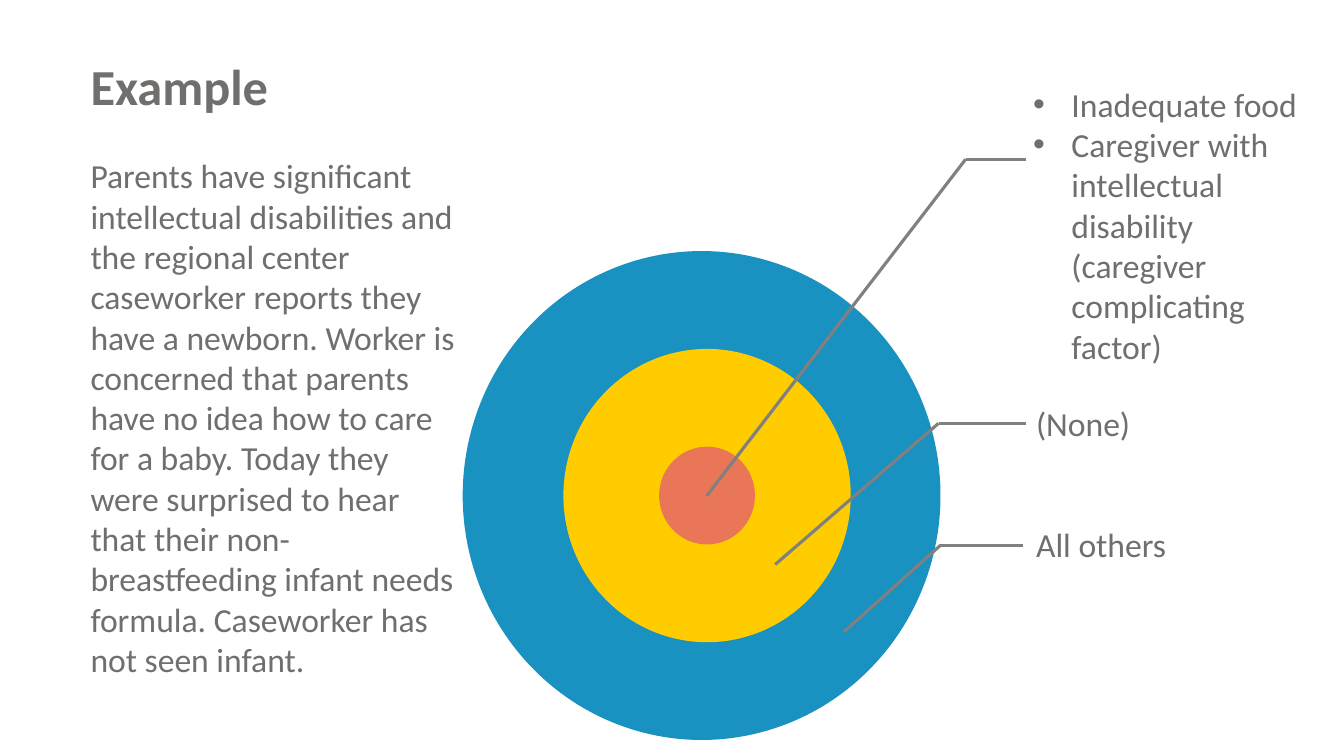
"""Build the Example slide: a case story beside a three-ring target with labelled leaders."""
from dataclasses import dataclass

from lxml.etree import SubElement
from pptx import Presentation
from pptx.dml.color import RGBColor
from pptx.enum.shapes import MSO_CONNECTOR, MSO_SHAPE
from pptx.enum.text import MSO_ANCHOR, MSO_AUTO_SIZE
from pptx.oxml.ns import qn
from pptx.slide import Slide
from pptx.util import Emu, Inches, Pt

SLIDE_WIDTH, SLIDE_HEIGHT = Inches(13.33), Inches(7.5)
RING_MIDDLE = 65.55
BULLET_INDENT = Inches(0.38)


@dataclass(frozen=True)
class Theme:
    font: str = "Calibri"
    text: str = "716F6D"
    leader: str = "808080"
    outer: str = "1991C1"
    middle: str = "FFCC00"
    inner: str = "EA7658"
    title_size: int = 36
    body_size: int = 24
    leader_width: float = 2.25


@dataclass(frozen=True)
class Passage:
    left: float
    top: float
    width: float
    height: float
    paragraphs: tuple[str, ...]
    bulleted: bool = False
    heading: bool = False


@dataclass(frozen=True)
class Ring:
    center: float
    width: float
    height: float
    color: str


@dataclass(frozen=True)
class Leader:
    elbow: tuple[float, float]
    label_edge: float
    target: tuple[float, float]


THEME = Theme()

RINGS = (
    Ring(52.2, 35.55, 64.67, THEME.outer),
    Ring(52.61, 21.38, 38.8, THEME.middle),
    Ring(52.61, 7.13, 12.93, THEME.inner),
)

LEADERS = (
    Leader((71.85, 21.07), 76.35, (52.58, 65.6)),
    Leader((69.83, 56), 76.35, (57.68, 74.67)),
    Leader((69.98, 72.13), 76.13, (62.78, 83.6)),
)

STORY = (
    "Parents have significant intellectual disabilities and the regional center "
    "caseworker reports they have a newborn. Worker is concerned that parents have "
    "no idea how to care for a baby. Today they were surprised to hear that their "
    "non-breastfeeding infant needs formula. Caseworker has not seen infant."
)

INNER_FACTORS = (
    "Inadequate food",
    "Caregiver with intellectual disability (caregiver complicating factor)",
)

INTRODUCTION = (
    Passage(6, 3.6, 87.38, 16.4, ("Example",), heading=True),
    Passage(6, 19.87, 29.18, 71.33, (STORY,)),
)

LABELS = (
    Passage(76.13, 10.4, 22.35, 39.07, INNER_FACTORS, bulleted=True),
    Passage(76.35, 52.67, 11.78, 6.67, ("(None)",)),
    Passage(76.35, 68.67, 13.43, 6.67, ("All others",)),
)


def across(percent: float) -> Emu:
    """Turn a percentage of the slide's width into a length."""
    return Emu(round(SLIDE_WIDTH * percent / 100))


def down(percent: float) -> Emu:
    """Turn a percentage of the slide's height into a length."""
    return Emu(round(SLIDE_HEIGHT * percent / 100))


def draw_passage(slide: Slide, passage: Passage) -> None:
    """Write a block of text, with bullets where it asks for them."""
    frame = slide.shapes.add_textbox(
        across(passage.left), down(passage.top),
        across(passage.width), down(passage.height),
    ).text_frame
    frame.word_wrap = True
    if passage.heading:
        frame.vertical_anchor = MSO_ANCHOR.MIDDLE
    else:
        frame.auto_size = MSO_AUTO_SIZE.SHAPE_TO_FIT_TEXT
    for index, wording in enumerate(passage.paragraphs):
        paragraph = frame.add_paragraph() if index else frame.paragraphs[0]
        if passage.heading:
            paragraph.line_spacing = 0.9
        if passage.bulleted:
            properties = paragraph._p.get_or_add_pPr()
            properties.set("marL", str(BULLET_INDENT))
            properties.set("indent", str(-BULLET_INDENT))
            SubElement(properties, qn("a:buFont"), typeface="Arial")
            SubElement(properties, qn("a:buChar"), char="•")
        run = paragraph.add_run()
        run.text = wording
        run.font.name = THEME.font
        run.font.size = Pt(THEME.title_size if passage.heading else THEME.body_size)
        run.font.bold = passage.heading
        run.font.color.rgb = RGBColor.from_string(THEME.text)


def draw_ring(slide: Slide, ring: Ring) -> None:
    """Draw one disc of the target."""
    disc = slide.shapes.add_shape(
        MSO_SHAPE.OVAL,
        across(ring.center - ring.width / 2), down(RING_MIDDLE - ring.height / 2),
        across(ring.width), down(ring.height),
    )
    disc.shadow.inherit = False
    disc.fill.solid()
    disc.fill.fore_color.rgb = RGBColor.from_string(ring.color)
    disc.line.fill.background()


def draw_leader(slide: Slide, leader: Leader) -> None:
    """Draw a bent line from a label to its ring."""
    x, y = leader.elbow
    for end_x, end_y in ((leader.label_edge, y), leader.target):
        stroke = slide.shapes.add_connector(
            MSO_CONNECTOR.STRAIGHT, across(x), down(y), across(end_x), down(end_y)
        )
        stroke.line.color.rgb = RGBColor.from_string(THEME.leader)
        stroke.line.width = Pt(THEME.leader_width)
        SubElement(stroke._element.spPr, qn("a:effectLst"))


def main() -> None:
    """Assemble and save the slide."""
    presentation = Presentation()
    presentation.slide_width, presentation.slide_height = SLIDE_WIDTH, SLIDE_HEIGHT
    slide = presentation.slides.add_slide(presentation.slide_layouts[6])
    for passage in INTRODUCTION:
        draw_passage(slide, passage)
    for ring in RINGS:
        draw_ring(slide, ring)
    for leader in LEADERS:
        draw_leader(slide, leader)
    for label in LABELS:
        draw_passage(slide, label)
    presentation.save("out.pptx")


if __name__ == "__main__":
    main()
